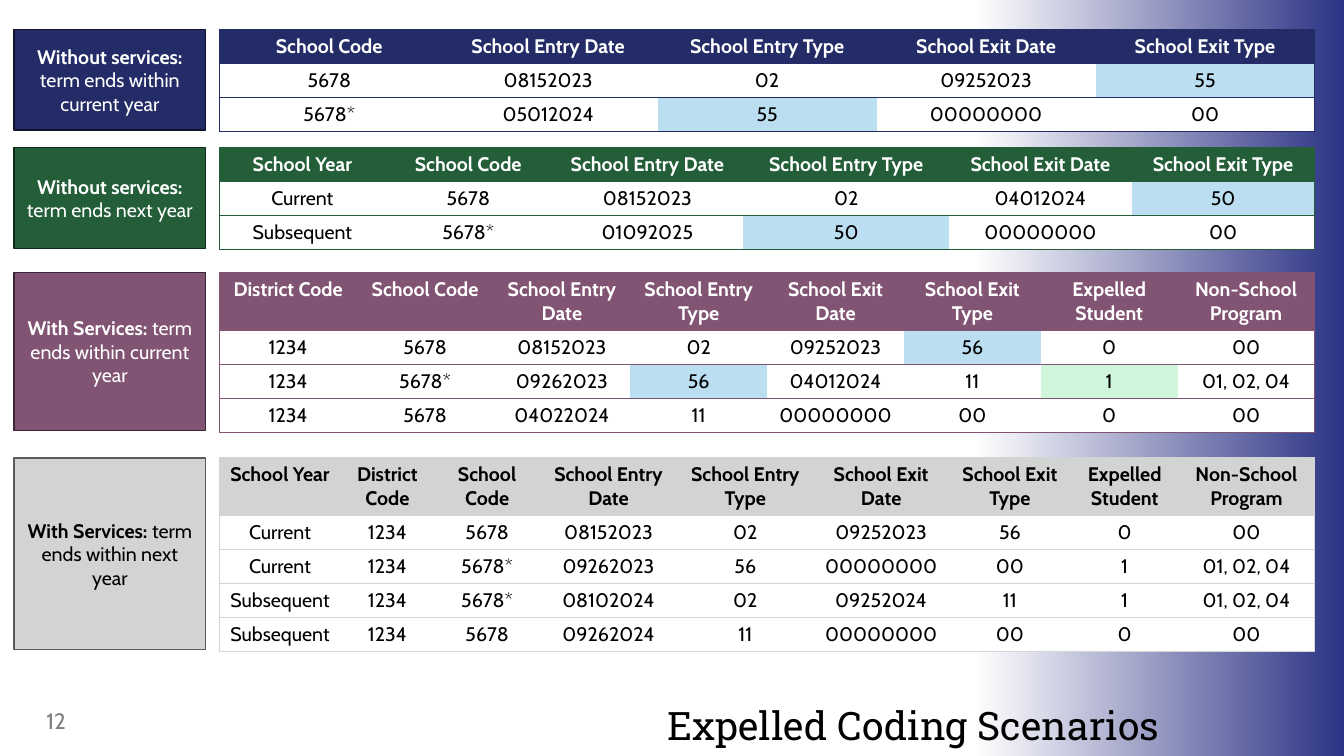
from lxml import etree
from pptx import Presentation
from pptx.dml.color import RGBColor
from pptx.enum.shapes import MSO_SHAPE
from pptx.enum.text import MSO_ANCHOR as ANCHOR, MSO_AUTO_SIZE as AUTO, PP_ALIGN as ALIGN
from pptx.oxml.ns import qn
from pptx.util import Pt

WHITE, BLACK, BLUE, GREEN = "FFFFFF", "000000", "BCDEF1", "CFF5DA"
NO_STYLE = "{2D5ABB26-0587-4C30-8999-92F81FD0307C}"
ROW_H, TABLE_X, LABEL_X, LABEL_W = 24, 157, 10, 137

SCENARIOS = [
    dict(
        top=21, head_h=24, fill="232C67", line="0F132D", color=WHITE,
        label=("Without services: ", "term ends within current year"),
        widths=[156.4] * 5,
        rows=[
            "School Code|School Entry Date|School Entry Type|School Exit Date|School Exit Type",
            "5678|08152023|02|09252023|55",
            "5678*|05012024|55|00000000|00",
        ],
        marks={(1, 4): BLUE, (2, 2): BLUE},
    ),
    dict(
        top=105.5, head_h=24, fill="235E39", line="0F2919", color=WHITE,
        label=("Without services: ", "term ends next year"),
        widths=[118, 119, 137, 147, 130.5, 130.5],
        rows=[
            "School Year|School Code|School Entry Date|School Entry Type|School Exit Date|School Exit Type",
            "Current|5678|08152023|02|04012024|50",
            "Subsequent|5678*|01092025|50|00000000|00",
        ],
        marks={(1, 5): BLUE, (2, 3): BLUE},
    ),
    dict(
        top=194.5, head_h=41, fill="825474", line="392533", color=WHITE,
        label=("With Services: ", "term ends within current year"),
        widths=[97.75] * 8,
        rows=[
            "District Code|School Code|School Entry Date|School Entry Type|"
            "School Exit Date|School Exit Type|Expelled Student|Non-School Program",
            "1234|5678|08152023|02|09252023|56|0|00",
            "1234|5678*|09262023|56|04012024|11|1|01, 02, 04",
            "1234|5678|04022024|11|00000000|00|0|00",
        ],
        marks={(1, 5): BLUE, (2, 3): BLUE, (2, 6): GREEN},
    ),
    dict(
        top=327, head_h=41, fill="D2D3D3", line="5C5C5C", color=BLACK,
        label=("With Services: ", "term ends within next year"),
        widths=[86, 67.5, 75, 98.5, 97, 97, 87, 77, 97],
        rows=[
            "School Year|District Code|School Code|School Entry Date|School Entry Type|"
            "School Exit Date|School Exit Type|Expelled Student|Non-School Program",
            "Current|1234|5678|08152023|02|09252023|56|0|00",
            "Current|1234|5678*|09262023|56|00000000|00|1|01, 02, 04",
            "Subsequent|1234|5678*|08102024|02|09252024|11|1|01, 02, 04",
            "Subsequent|1234|5678|09262024|11|00000000|00|0|00",
        ],
        marks={},
    ),
]


def rgb(value):
    return RGBColor.from_string(value)


def add_text(tf, text, size=14, font="Cabin", color=BLACK, bold=False, align=ALIGN.CENTER):
    p = tf.paragraphs[0]
    p.alignment = align
    r = p.add_run()
    r.text = text
    r.font.size, r.font.name, r.font.bold = Pt(size), font, bold
    r.font.color.rgb = rgb(color)
    return p


def add_rect(slide, x, y, w, h):
    sp = slide.shapes.add_shape(MSO_SHAPE.RECTANGLE, Pt(x), Pt(y), Pt(w), Pt(h))
    sp.shadow.inherit = False
    return sp


def add_side_gradient(slide):
    sp = add_rect(slide, 696, 0, 264, 540)
    sp.line.fill.background()
    sp.fill.gradient()
    sp.fill.gradient_angle = 0
    for stop, color in zip(sp.fill.gradient_stops, (WHITE, "2C3384")):
        stop.color.rgb = rgb(color)
    slide.shapes._spTree.insert(2, sp._element)


def add_title(slide, text):
    sp = slide.shapes.title
    sp.left, sp.top, sp.width, sp.height = Pt(306.5), Pt(464.5), Pt(521.5), Pt(70.5)
    tf = sp.text_frame
    tf.auto_size, tf.word_wrap, tf.vertical_anchor = AUTO.NONE, True, ANCHOR.BOTTOM
    tf.margin_left = tf.margin_right = tf.margin_top = tf.margin_bottom = 0
    p = add_text(tf, text, size=28, font="Roboto Slab", align=ALIGN.RIGHT)
    p.line_spacing = 0.9


def add_label(slide, s):
    height = s["head_h"] + ROW_H * (len(s["rows"]) - 1)
    sp = add_rect(slide, LABEL_X, s["top"], LABEL_W, height)
    sp.fill.solid()
    sp.fill.fore_color.rgb = rgb(s["fill"])
    sp.line.color.rgb = rgb(s["line"])
    sp.line.width = Pt(1)
    tf = sp.text_frame
    tf.word_wrap, tf.vertical_anchor = True, ANCHOR.MIDDLE
    name, term = s["label"]
    add_text(tf, name, color=s["color"], bold=True)
    add_text(tf, term, color=s["color"])


def set_borders(cell, sides, color):
    tcPr = cell._tc.get_or_add_tcPr()
    for side in sides:
        ln = etree.SubElement(tcPr, qn("a:ln" + side), w=str(Pt(0.5)))
        fill = etree.SubElement(ln, qn("a:solidFill"))
        etree.SubElement(fill, qn("a:srgbClr"), val=color)


def add_scenario_table(slide, s):
    widths, rows = s["widths"], [row.split("|") for row in s["rows"]]
    heights = [s["head_h"]] + [ROW_H] * (len(rows) - 1)
    frame = slide.shapes.add_table(len(rows), len(widths), Pt(TABLE_X), Pt(s["top"]),
                                   Pt(sum(widths)), Pt(sum(heights)))
    table = frame.table
    table.horz_banding = False
    table._tbl.tblPr.find(qn("a:tableStyleId")).text = NO_STYLE
    for col, width in zip(table.columns, widths):
        col.width = Pt(width)
    for i, (row, height) in enumerate(zip(rows, heights)):
        table.rows[i].height = Pt(height)
        head = i == 0
        for j, text in enumerate(row):
            cell = table.cell(i, j)
            sides = ("L" if j == 0 else "") + ("R" if j == len(row) - 1 else "")
            set_borders(cell, sides + ("TB" if head else "B"), s["fill"])
            cell.fill.solid()
            cell.fill.fore_color.rgb = rgb(s["fill"] if head else s["marks"].get((i, j), WHITE))
            add_text(cell.text_frame, text, color=s["color"] if head else BLACK, bold=head)


def add_page_number(slide, text):
    sp = slide.shapes.add_textbox(Pt(26), Pt(500.5), Pt(216), Pt(29))
    tf = sp.text_frame
    tf.word_wrap, tf.vertical_anchor = True, ANCHOR.MIDDLE
    add_text(tf, text, size=16, color="808080", align=ALIGN.LEFT)


def main():
    prs = Presentation()
    prs.slide_width, prs.slide_height = Pt(960), Pt(540)
    slide = prs.slides.add_slide(prs.slide_layouts[5])
    add_side_gradient(slide)
    add_title(slide, "Expelled Coding Scenarios")
    for scenario in SCENARIOS:
        add_label(slide, scenario)
        add_scenario_table(slide, scenario)
    add_page_number(slide, "12")
    prs.save("out.pptx")


if __name__ == "__main__":
    main()
